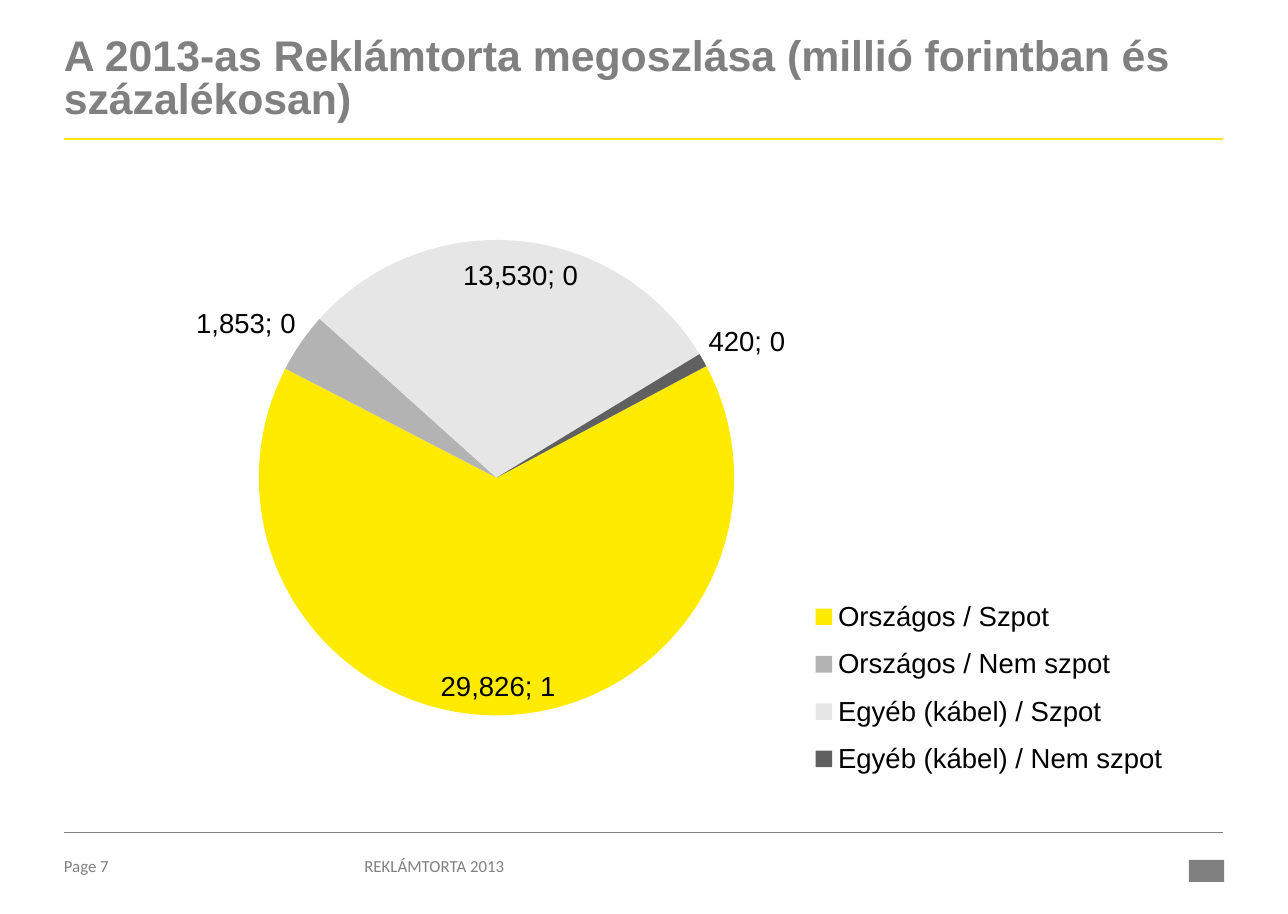
from lxml.etree import SubElement
from pptx import Presentation
from pptx.chart.data import CategoryChartData
from pptx.dml.color import RGBColor
from pptx.enum.chart import XL_CHART_TYPE, XL_LABEL_POSITION, XL_LEGEND_POSITION
from pptx.enum.shapes import MSO_CONNECTOR, MSO_SHAPE
from pptx.oxml.ns import qn
from pptx.util import Inches, Pt

COLORS = {
    "text": "808080",
    "accent": "FFE600",
    "label": "000000",
}
SEGMENTS = [
    ("Országos / Szpot", 29826, "FFEB00"),
    ("Országos / Nem szpot", 1853, "B3B3B3"),
    ("Egyéb (kábel) / Szpot", 13530, "E6E6E6"),
    ("Egyéb (kábel) / Nem szpot", 420, "606060"),
]
LEFT, RIGHT = 0.58, 11.11


def rgb(name):
    return RGBColor.from_string(COLORS[name])


def add_text(slide, text, left, top, width, height, size, font, bold=False, spacing=1.0):
    box = slide.shapes.add_textbox(Inches(left), Inches(top), Inches(width), Inches(height))
    frame = box.text_frame
    frame.word_wrap = True
    frame.margin_left = frame.margin_right = frame.margin_top = frame.margin_bottom = 0
    paragraph = frame.paragraphs[0]
    paragraph.line_spacing = spacing
    run = paragraph.add_run()
    run.text = text
    run.font.name = font
    run.font.size = Pt(size)
    run.font.bold = bold
    run.font.color.rgb = rgb("text")


def add_rule(slide, y, color, width):
    rule = slide.shapes.add_connector(
        MSO_CONNECTOR.STRAIGHT, Inches(LEFT), Inches(y), Inches(RIGHT), Inches(y)
    )
    rule.line.color.rgb = rgb(color)
    rule.line.width = Pt(width)
    SubElement(rule._element.spPr, qn("a:effectLst"))


def add_emblem(slide):
    emblem = slide.shapes.add_shape(
        MSO_SHAPE.RECTANGLE, Inches(10.8), Inches(7.81), Inches(0.32), Inches(0.2)
    )
    emblem.shadow.inherit = False
    emblem.fill.solid()
    emblem.fill.fore_color.rgb = rgb("text")
    emblem.line.fill.background()


def place(parent, index, inner, x, y, w, h):
    for old in parent.findall(qn("c:layout")):
        parent.remove(old)
    layout = SubElement(parent, qn("c:layout"))
    parent.insert(index, layout)
    manual = SubElement(layout, qn("c:manualLayout"))
    settings = [("xMode", "edge"), ("yMode", "edge"), ("x", x), ("y", y), ("w", w), ("h", h)]
    if inner:
        settings.insert(0, ("layoutTarget", "inner"))
    for tag, value in settings:
        SubElement(manual, qn(f"c:{tag}")).set("val", str(value))


def style_labels(plot):
    plot.has_data_labels = True
    labels = plot.data_labels
    labels.show_value = True
    labels.show_percentage = True
    labels.number_format = "#,##0"
    labels.number_format_is_linked = False
    labels.position = XL_LABEL_POSITION.BEST_FIT
    labels.font.name = "Arial"
    labels.font.size = Pt(18)
    labels.font.color.rgb = rgb("label")
    separator = SubElement(labels._element, qn("c:separator"))
    separator.text = "; "
    labels._element.find(qn("c:showBubbleSize")).addnext(separator)


def add_pie(slide):
    names, values, fills = zip(*SEGMENTS)
    data = CategoryChartData(number_format="#,##0")
    data.categories = names
    data.add_series("Series 1", values)
    chart = slide.shapes.add_chart(
        XL_CHART_TYPE.PIE, Inches(1.03), Inches(1.43), Inches(9.79), Inches(5.84), data
    ).chart
    chart.has_title = False
    chart.font.name = "Arial"
    chart.font.size = Pt(18)
    chart.font.color.rgb = rgb("label")

    plot = chart.plots[0]
    plot.vary_by_categories = True
    for index, fill in enumerate(fills):
        segment = plot.series[0].points[index].format
        segment.fill.solid()
        segment.fill.fore_color.rgb = RGBColor.from_string(fill)
        segment.line.fill.background()
    style_labels(plot)

    plot_area = chart._chartSpace.chart.plotArea
    pie = plot_area.find(qn("c:pieChart"))
    SubElement(pie, qn("c:firstSliceAng")).set("val", "62")
    place(plot_area, 0, True, 0.135, 0.128, 0.441, 0.74)

    chart.has_legend = True
    legend = chart.legend
    legend.position = XL_LEGEND_POSITION.RIGHT
    legend.include_in_layout = False
    legend.font.name = "Arial"
    legend.font.size = Pt(18)
    legend.font.color.rgb = rgb("label")
    place(legend._element, 1, False, 0.64, 0.665, 0.345, 0.32)


def main():
    deck = Presentation()
    deck.slide_width = Inches(11.7)
    deck.slide_height = Inches(8.3)
    slide = deck.slides.add_slide(deck.slide_layouts[6])
    add_rule(slide, 1.26, "accent", 1.5)
    add_rule(slide, 7.56, "text", 0.25)
    add_text(
        slide, "A 2013-as Reklámtorta megoszlása (millió forintban és százalékosan)",
        LEFT, 0.33, RIGHT - LEFT, 0.94, 28, "Arial", bold=True, spacing=0.85,
    )
    add_pie(slide)
    add_text(slide, "Page 7", LEFT, 7.77, 0.85, 0.24, 11, "Calibri")
    add_text(slide, "REKLÁMTORTA 2013", 3.31, 7.77, 4.39, 0.24, 11, "Calibri")
    add_emblem(slide)
    deck.save("out.pptx")


if __name__ == "__main__":
    main()
